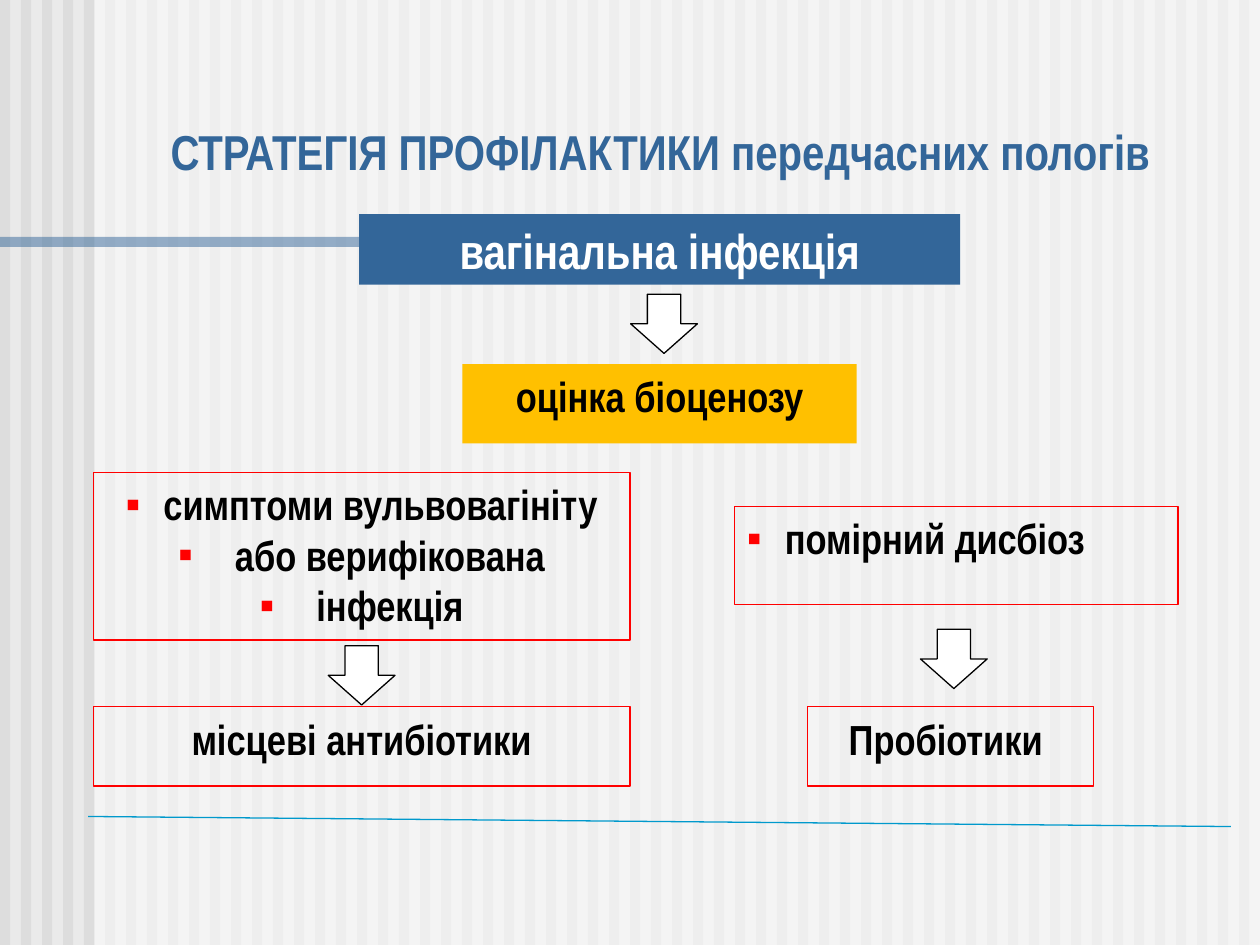
from lxml.etree import SubElement
from pptx import Presentation
from pptx.dml.color import RGBColor
from pptx.enum.shapes import MSO_CONNECTOR, MSO_SHAPE
from pptx.enum.text import MSO_ANCHOR, PP_ALIGN
from pptx.oxml.ns import qn
from pptx.util import Inches, Pt

FONT = "Arial Narrow"
COLORS = {
    "back": "EAEAEA", "stripe": "DDDDDD", "white": "FFFFFF", "blue": "336699",
    "gold": "FFC000", "red": "FF0000", "black": "000000", "cyan": "0099CC",
}


def color(name):
    return RGBColor.from_string(COLORS[name])


def add_box(slide, x, y, w, h, fill=None, line=None, alpha=None,
            kind=MSO_SHAPE.RECTANGLE):
    """Draw a flat shape; alpha is the opacity of its fill in percent."""
    box = slide.shapes.add_shape(kind, Inches(x), Inches(y), Inches(w), Inches(h))
    box.shadow.inherit = False
    if fill:
        box.fill.solid()
        box.fill.fore_color.rgb = color(fill)
    else:
        box.fill.background()
    if alpha:
        tone = box.fill._xPr.find(qn("a:solidFill"))[0]
        SubElement(tone, qn("a:alpha"), val=str(alpha * 1000))
    if line:
        box.line.color.rgb = color(line)
        box.line.width = Pt(0.75)
    else:
        box.line.fill.background()
    return box


def add_bullet(para, gap):
    """Give a paragraph a red square with a hanging indent of gap inches."""
    props = para._p.get_or_add_pPr()
    props.set("marL", str(Inches(gap)))
    props.set("indent", str(-Inches(gap)))
    tint = SubElement(props, qn("a:buClr"))
    SubElement(tint, qn("a:srgbClr"), val=COLORS["red"])
    SubElement(props, qn("a:buFont"), typeface="Arial")
    SubElement(props, qn("a:buChar"), char="▪")


def set_text(shape, *lines, size=24, tint="black", align=PP_ALIGN.CENTER,
             anchor=MSO_ANCHOR.TOP, gaps=()):
    frame = shape.text_frame
    frame.word_wrap = True
    frame.vertical_anchor = anchor
    frame.text = "\n".join(lines)
    for para in frame.paragraphs:
        para.alignment = align
        font = para.runs[0].font
        font.name, font.size, font.bold = FONT, Pt(size), True
        font.color.rgb = color(tint)
    for para, gap in zip(frame.paragraphs, gaps):
        add_bullet(para, gap)


def add_arrow(slide, mid_x, mid_y):
    """Draw a block arrow pointing down, centred on the given point."""
    w, h = 0.47, 0.53
    arrow = add_box(slide, mid_x - w / 2, mid_y - h / 2, w, h, "white", "black",
                    kind=MSO_SHAPE.RIGHT_ARROW)
    arrow.rotation = 90


def add_rule(slide, x1, y1, x2, y2, tint):
    rule = slide.shapes.add_connector(
        MSO_CONNECTOR.STRAIGHT, Inches(x1), Inches(y1), Inches(x2), Inches(y2))
    rule.line.color.rgb = color(tint)
    rule.line.width = Pt(0.75)
    SubElement(rule._element.spPr, qn("a:effectLst"))


def add_back(slide):
    slide.background.fill.solid()
    slide.background.fill.fore_color.rgb = color("back")
    for i in range(60):
        add_box(slide, i / 6, 0, 0.08, 7.5, "stripe")
    add_box(slide, 0.75, 0, 9.25, 7.5, "white", alpha=50)
    add_box(slide, 0, 1.88, 7.6, 0.08, "blue", alpha=50)


def main():
    deck = Presentation()
    deck.slide_width, deck.slide_height = Inches(10), Inches(7.5)
    slide = deck.slides.add_slide(deck.slide_layouts[6])
    add_back(slide)

    # Title and topic
    title = slide.shapes.add_textbox(
        Inches(1.12), Inches(0.91), Inches(8.24), Inches(0.57))
    set_text(title, "СТРАТЕГІЯ ПРОФІЛАКТИКИ передчасних пологів",
             size=28, tint="blue", anchor=MSO_ANCHOR.BOTTOM)
    topic = add_box(slide, 2.85, 1.7, 4.77, 0.56, "blue")
    set_text(topic, "вагінальна інфекція", size=28, tint="white")
    add_rule(slide, 0.7, 6.48, 9.77, 6.56, "cyan")

    # Assessment
    check = add_box(slide, 3.67, 2.89, 3.13, 0.63, "gold")
    set_text(check, "оцінка біоценозу")

    # Findings
    mild = add_box(slide, 5.83, 4.02, 3.52, 0.78, line="red")
    set_text(mild, "помірний дисбіоз", align=PP_ALIGN.LEFT, gaps=[0.3])
    signs = add_box(slide, 0.74, 3.75, 4.26, 1.33, line="red")
    set_text(signs, "симптоми вульвовагініту", "або верифікована", "інфекція",
             gaps=[0.3, 0.45, 0.45])

    # Treatments
    flora = add_box(slide, 6.41, 5.61, 2.27, 0.63, line="red")
    set_text(flora, "Пробіотики ")
    drugs = add_box(slide, 0.74, 5.61, 4.26, 0.63, line="red")
    set_text(drugs, "місцеві антибіотики")

    # Arrows between the steps
    for mid_x, mid_y in [(5.27, 2.57), (2.87, 5.36), (7.57, 5.23)]:
        add_arrow(slide, mid_x, mid_y)

    deck.save("out.pptx")


if __name__ == "__main__":
    main()
